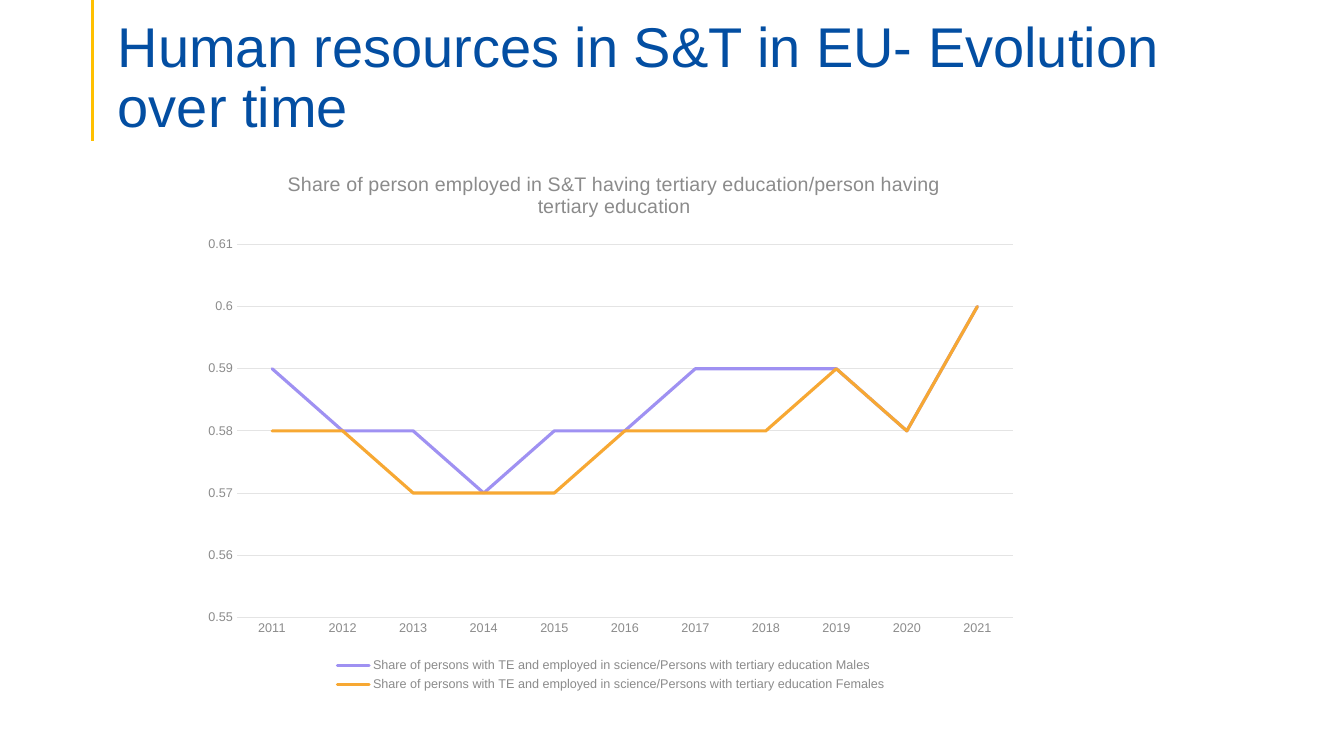
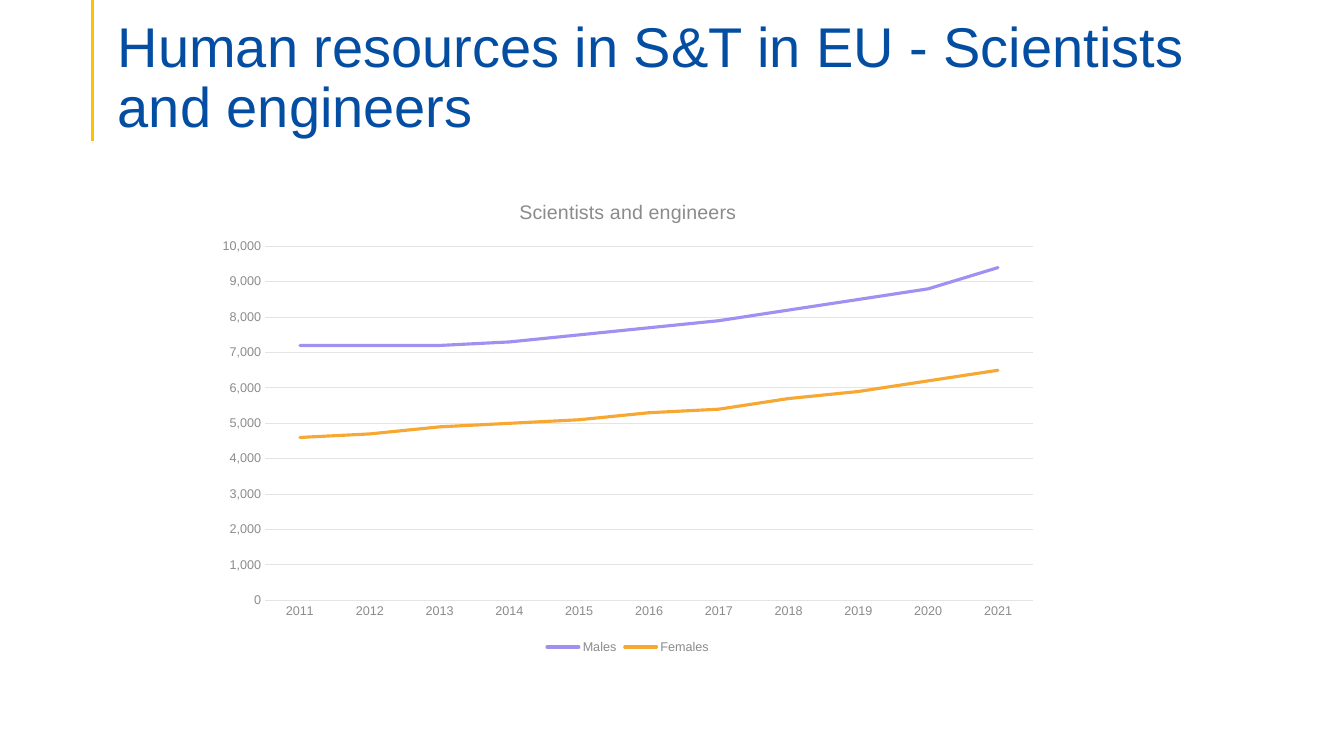
import dataclasses

import pptx
import pptx.chart.data
import pptx.dml.color
import pptx.enum.chart
import pptx.enum.shapes
import pptx.enum.text
import pptx.oxml
import pptx.oxml.ns
import pptx.util

Cm = pptx.util.Cm
Pt = pptx.util.Pt


@dataclasses.dataclass(frozen=True)
class Theme:
    face: str = "Arial"
    head: str = "034EA2"
    band: str = "FFC000"
    grey: str = "8B8B8B"
    grid: str = "E4E4E4"
    lines: tuple = ("9F91F2", "F7A833")
    big: float = 40
    mid: float = 14
    small: float = 9
    thick: float = 2.25
    thin: float = 0.75


def style(font, face, size, color):
    font.name = face
    font.size = Pt(size)
    font.bold = False
    font.color.rgb = pptx.dml.color.RGBColor.from_string(color)


def write(frame, text, face="Arial", size=14, color="000000", align=None, space=None):
    para = frame.paragraphs[0]
    para.alignment = align
    para.line_spacing = space
    run = para.add_run()
    run.text = text
    style(run.font, face, size, color)


def stroke(line, color, width):
    line.color.rgb = pptx.dml.color.RGBColor.from_string(color)
    line.width = Pt(width)


def fix(node, spot, place, index, target=""):
    for old in node.xpath("c:layout"):
        node.remove(old)
    left, top, width, height = place
    parts = ((spot[0] - left) / width, (spot[1] - top) / height,
             *(size / full for size, full in zip(spot[2:], (width, height))))
    modes = "".join(f'<c:{key}Mode val="edge"/>' for key in "xy")
    sizes = "".join(f'<c:{key} val="{part:.4f}"/>' for key, part in zip("xywh", parts))
    node.insert(index, pptx.oxml.parse_xml(
        f"<c:layout {pptx.oxml.ns.nsdecls('c')}><c:manualLayout>"
        f"{target}{modes}{sizes}</c:manualLayout></c:layout>"))


class Deck:
    """Hold the theme and the current slide, and draw each kind of element."""

    def __init__(self, theme):
        self.theme = theme
        self.file = pptx.Presentation()
        self.file.slide_width = Cm(33.87)
        self.file.slide_height = Cm(19.05)
        self.layout = self.file.slide_layouts[5]
        self.slide = None

    def page(self, text):
        first = self.slide is None
        self.slide = self.file.slides.add_slide(self.layout)
        if first:
            self.band()
        self.title(text)

    def band(self):
        bar = self.slide.shapes.add_connector(
            pptx.enum.shapes.MSO_CONNECTOR.STRAIGHT, Cm(2.34), 0, Cm(2.34), Cm(3.56))
        stroke(bar.line, self.theme.band, self.theme.thick)
        node = bar.element
        node.spPr.append(pptx.oxml.parse_xml(
            f"<a:effectLst {pptx.oxml.ns.nsdecls('a')}/>"))
        node.xpath("p:nvCxnSpPr/p:cNvPr")[0].set("id", "20")
        self.layout.shapes.element.append(node)

    def title(self, text):
        box = self.slide.shapes.title
        box.left, box.top, box.width, box.height = map(Cm, (2.72, 1.34, 29.21, 2.18))
        frame = box.text_frame
        frame.word_wrap = True
        frame.auto_size = pptx.enum.text.MSO_AUTO_SIZE.NONE
        frame.vertical_anchor = pptx.enum.text.MSO_ANCHOR.BOTTOM
        frame.margin_left = frame.margin_right = Cm(0.25)
        frame.margin_top, frame.margin_bottom = Cm(0.13), 0
        write(frame, text, face=self.theme.face, size=self.theme.big,
              color=self.theme.head, align=pptx.enum.text.PP_ALIGN.LEFT, space=0.9)

    def chart(self, text, place, plot, cats, rows, scale, form, spot=None):
        data = pptx.chart.data.CategoryChartData(number_format=form)
        data.categories = cats
        for name, vals in rows.items():
            data.add_series(name, vals)
        chart = self.slide.shapes.add_chart(
            pptx.enum.chart.XL_CHART_TYPE.LINE, *map(Cm, place), data).chart
        theme = self.theme
        style(chart.font, theme.face, theme.small, theme.grey)
        chart.has_title = True
        write(chart.chart_title.text_frame, text, face=theme.face,
              size=theme.mid, color=theme.grey)
        chart.chart_title.include_in_layout = False
        chart.has_legend = True
        chart.legend.position = pptx.enum.chart.XL_LEGEND_POSITION.BOTTOM
        chart.legend.include_in_layout = False
        style(chart.legend.font, theme.face, theme.small, theme.grey)
        self.axes(chart, scale, form)
        for row, color in zip(chart.plots[0].series, theme.lines):
            row.smooth = False
            row.marker.style = pptx.enum.chart.XL_MARKER_STYLE.NONE
            stroke(row.format.line, color, theme.thick)
        for node in chart.element.xpath(".//c:ser/c:spPr/a:ln"):
            node.set("cap", "rnd")
        fix(chart.element.xpath(".//c:plotArea")[0], plot, place, 0,
            '<c:layoutTarget val="inner"/>')
        if spot:
            fix(chart.element.xpath("c:chart/c:title")[0], spot, place, 1)

    def axes(self, chart, scale, form):
        theme = self.theme
        for axis in (chart.category_axis, chart.value_axis):
            axis.major_tick_mark = pptx.enum.chart.XL_TICK_MARK.NONE
            axis.minor_tick_mark = pptx.enum.chart.XL_TICK_MARK.NONE
            style(axis.tick_labels.font, theme.face, theme.small, theme.grey)
        stroke(chart.category_axis.format.line, theme.grid, theme.thin)
        axis = chart.value_axis
        axis.minimum_scale, axis.maximum_scale, axis.major_unit = scale
        axis.format.line.fill.background()
        axis.has_major_gridlines = True
        stroke(axis.major_gridlines.format.line, theme.grid, theme.thin)
        axis.tick_labels.number_format = form
        axis.tick_labels.number_format_is_linked = False


def main():
    deck = Deck(Theme())
    years = [str(year) for year in range(2011, 2022)]
    share = "Share of persons with TE and employed in science/Persons with tertiary education"

    deck.page("Human resources in S&T in EU- Evolution over time")
    deck.chart(
        "Share of person employed in S&T having tertiary education/person having tertiary education",
        place=(4.83, 3.94, 21.13, 13.59), plot=(5.97, 6.16, 19.55, 9.4),
        spot=(7.16, 4.23), cats=years,
        rows={
            f"{share} Males": (0.59, 0.58, 0.58, 0.57, 0.58, 0.58,
                               0.59, 0.59, 0.59, 0.58, 0.6),
            f"{share} Females": (0.58, 0.58, 0.57, 0.57, 0.57, 0.58,
                                 0.58, 0.58, 0.59, 0.58, 0.6),
        },
        scale=(0.55, 0.61, 0.01), form="General")

    deck.page("Human resources in S&T in EU - Scientists and engineers")
    deck.chart(
        "Scientists and engineers",
        place=(5.18, 4.55, 21.29, 12.04), plot=(6.68, 6.21, 19.35, 8.92), cats=years,
        rows={
            "Males": (7200, 7200, 7200, 7300, 7500, 7700, 7900, 8200, 8500, 8800, 9400),
            "Females": (4600, 4700, 4900, 5000, 5100, 5300, 5400, 5700, 5900, 6200, 6500),
        },
        scale=(0, 10000, 1000), form="#,##0")

    deck.file.save("out.pptx")


if __name__ == "__main__":
    main()
